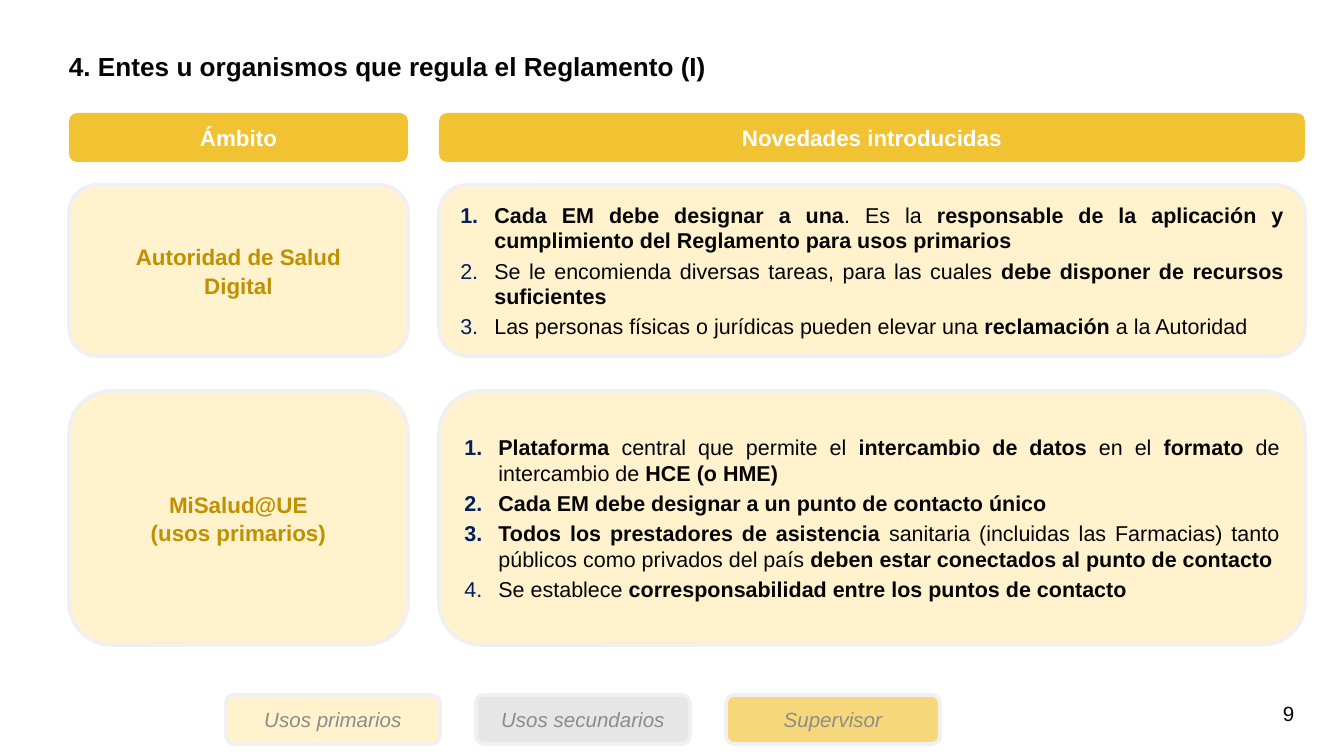
import dataclasses

import lxml.etree
import pptx
import pptx.dml.color
import pptx.enum.shapes
import pptx.enum.text
import pptx.oxml.ns
import pptx.util

SCALE = 914400 / 134.4
ALIGN = pptx.enum.text.PP_ALIGN
ANCHOR = pptx.enum.text.MSO_ANCHOR


@dataclasses.dataclass(frozen=True)
class Theme:
    """Colours, type sizes and spacing of the slide."""
    font: str = "Arial"
    ink: str = "040404"
    white: str = "FFFFFF"
    gold: str = "F1C232"
    cream: str = "FFF2CC"
    amber: str = "F6D87A"
    grey: str = "E6E6E6"
    edge: str = "F0F0F0"
    ochre: str = "BF9000"
    navy: str = "002060"
    muted: str = "8C8C8C"
    title: float = 14
    head: float = 12
    body: float = 11.5
    small: float = 11
    gap: float = 2.3
    border: float = 2


THEME = Theme()


def px(num):
    """Turn pixels into EMU."""
    return pptx.util.Emu(round(num * SCALE))


def rgb(code):
    """Turn a hex code into a colour."""
    return pptx.dml.color.RGBColor.from_string(code)


def setup(frame, pads, anchor):
    """Set wrapping, margins and anchor of a text frame."""
    frame.word_wrap = True
    frame.vertical_anchor = anchor
    frame.margin_left = frame.margin_right = px(pads[0])
    frame.margin_top = frame.margin_bottom = px(pads[1])


def add_run(para, text, size, color, bold=False, italic=False):
    """Add one styled run to a paragraph."""
    run = para.add_run()
    run.text = text
    font = run.font
    font.name, font.size = THEME.font, pptx.util.Pt(size)
    font.bold, font.italic = bold, italic
    font.color.rgb = rgb(color)


def add_text(shapes, box, pads=(0, 0), anchor=ANCHOR.TOP):
    """Add a text box and return its first paragraph."""
    frame = shapes.add_textbox(*map(px, box)).text_frame
    setup(frame, pads, anchor)
    return frame.paragraphs[0]


def add_card(shapes, box, fill, edge=None):
    """Add a rounded box and return its text frame."""
    kind = pptx.enum.shapes.MSO_SHAPE.ROUNDED_RECTANGLE
    card = shapes.add_shape(kind, *map(px, box))
    card.shadow.inherit = False
    card.fill.solid()
    card.fill.fore_color.rgb = rgb(fill)
    if edge:
        card.line.color.rgb = rgb(edge)
        card.line.width = pptx.util.Pt(THEME.border)
    else:
        card.line.fill.background()
    setup(card.text_frame, (13, 9), ANCHOR.MIDDLE)
    return card.text_frame


def add_head(shapes, box, text):
    """Add a column heading."""
    para = add_card(shapes, box, THEME.gold).paragraphs[0]
    para.alignment = ALIGN.CENTER
    add_run(para, text, THEME.head, THEME.white, bold=True)


def add_list(frame, items):
    """Fill a frame with numbered items, bold between asterisks."""
    for pos, item in enumerate(items):
        para = frame.add_paragraph() if pos else frame.paragraphs[0]
        para.alignment = ALIGN.JUSTIFY
        props = para._p.get_or_add_pPr()
        props.set("marL", str(px(34)))
        props.set("indent", str(px(-34)))
        name = pptx.oxml.ns.qn
        tint = lxml.etree.SubElement(props, name("a:buClr"))
        lxml.etree.SubElement(tint, name("a:srgbClr"), val=THEME.navy)
        lxml.etree.SubElement(props, name("a:buAutoNum"), type="arabicPeriod")
        if pos:
            para.space_before = pptx.util.Pt(THEME.gap)
        for turn, part in enumerate(item.split("*")):
            if part:
                add_run(para, part, THEME.body, THEME.ink, bold=turn % 2 == 1)


def add_row(shapes, box, lines, items):
    """Add a grouped row: a label card and a card of numbered items."""
    left, top, width, height = box
    group = shapes.add_group_shape().shapes
    side, gap, inset = 339, 31, 36
    add_card(group, (left, top, side, height), THEME.cream, THEME.edge)
    main = (left + side + gap, top, width - side - gap, height)
    add_list(add_card(group, main, THEME.cream, THEME.edge), items)
    label = (left + inset, top + 42, side - 2 * inset, height - 84)
    para = add_text(group, label, (13, 13), ANCHOR.MIDDLE)
    para.alignment = ALIGN.CENTER
    para.line_spacing = 1.06
    for pos, line in enumerate(lines):
        if pos:
            para.add_line_break()
        add_run(para, line, THEME.head, THEME.ochre, bold=True)


def add_key(shapes, box, pairs):
    """Add the colour key, its boxes spread evenly."""
    left, top, width, height = box
    size = 214
    step = (width - size) / (len(pairs) - 1)
    for pos, (text, fill) in enumerate(pairs):
        spot = (left + pos * step, top, size, height)
        para = add_card(shapes, spot, fill, THEME.edge).paragraphs[0]
        para.alignment = ALIGN.CENTER
        add_run(para, text, THEME.small, THEME.muted, italic=True)


def main():
    """Build and save the slide."""
    deck = pptx.Presentation()
    deck.slide_width, deck.slide_height = px(1344), px(756)
    shapes = deck.slides.add_slide(deck.slide_layouts[6]).shapes
    title = add_text(shapes, (69, 50, 1239, 50))
    add_run(title, "4. Entes u organismos que regula el Reglamento (I)",
            THEME.title, THEME.ink, bold=True)
    add_head(shapes, (69, 113, 339, 49), "Ámbito")
    add_head(shapes, (439, 113, 866, 49), "Novedades introducidas")
    add_row(shapes, (69, 185, 1236, 171), ["Autoridad de Salud Digital"], [
        "*Cada EM debe designar a una*. Es la *responsable de la aplicación "
        "y cumplimiento del Reglamento para usos primarios*",
        "Se le encomienda diversas tareas, para las cuales *debe disponer "
        "de recursos suficientes*",
        "Las personas físicas o jurídicas pueden elevar una *reclamación* "
        "a la Autoridad",
    ])
    add_row(shapes, (69, 391, 1236, 254), ["MiSalud@UE", "(usos primarios)"], [
        "*Plataforma* central que permite el *intercambio de datos *en el "
        "*formato* de intercambio de *HCE (o HME)*",
        "*Cada EM debe designar a un punto de contacto único*",
        "*Todos los prestadores de asistencia *sanitaria (incluidas las "
        "Farmacias) tanto públicos como privados del país *deben estar "
        "conectados al punto de contacto*",
        "Se establece *corresponsabilidad entre los puntos de contacto*",
    ])
    add_key(shapes, (226, 695, 714, 49), [
        ("Usos primarios", THEME.cream),
        ("Usos secundarios", THEME.grey),
        ("Supervisor", THEME.amber),
    ])
    page = add_text(shapes, (1270, 694, 74, 59), (13, 7))
    add_run(page, "9", THEME.small, THEME.ink)
    deck.save("out.pptx")


if __name__ == "__main__":
    main()
